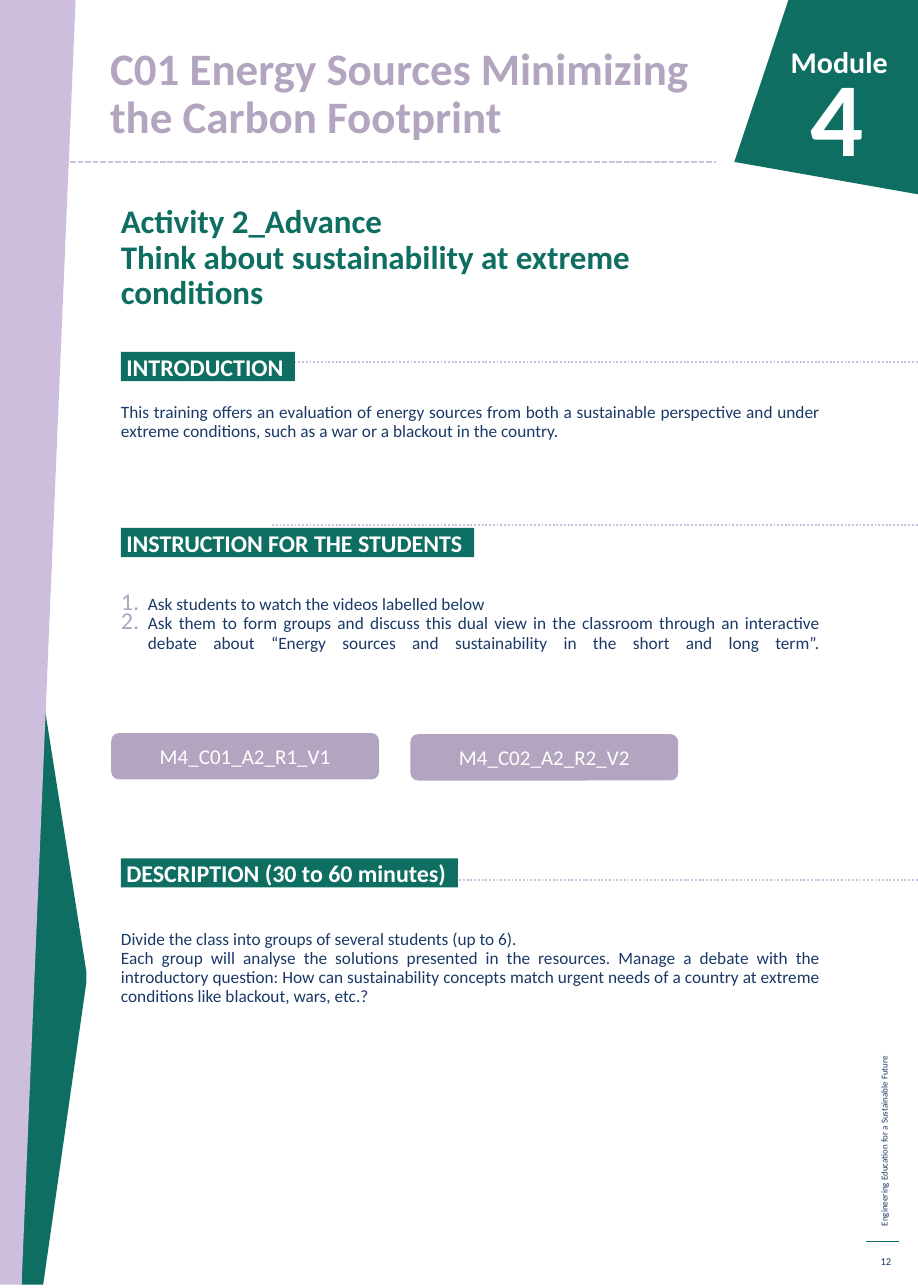
import pptx
import pptx.dml.color
import pptx.enum.dml
import pptx.enum.shapes
import pptx.enum.text
import pptx.oxml.ns
import pptx.util
from dataclasses import dataclass
from lxml import etree

ALIGN = pptx.enum.text.PP_ALIGN
ANCHOR = pptx.enum.text.MSO_ANCHOR
SHAPE = pptx.enum.shapes.MSO_SHAPE
DASH = pptx.enum.dml.MSO_LINE
UNIT = pptx.util.Inches(0.1)
COLUMNS, ROWS = 85, 119.3
MARGIN = 11.2
BODY_WIDTH = 64.7


@dataclass(frozen=True)
class Theme:
    font: str = "Calibri"
    green: str = "0E6E61"
    lavender: str = "CEBEDD"
    mauve: str = "B3A5C0"
    navy: str = "1A3966"
    white: str = "FFFFFF"
    number: float = 70
    title: float = 30
    activity: float = 22
    module: float = 20
    heading: float = 16
    label: float = 14
    body: float = 11.5
    page: float = 7
    footer: float = 6


THEME = Theme()


def grid(*cells):
    return [round(cell * UNIT) for cell in cells]


def rgb(value):
    return pptx.dml.color.RGBColor.from_string(value)


def add_bullet(p, tag, **attributes):
    return etree.SubElement(p._p.get_or_add_pPr(), pptx.oxml.ns.qn(tag), **attributes)


def write_text(tf, paragraphs, size, color, bold=False, align=ALIGN.LEFT,
               anchor=ANCHOR.TOP, spacing=None, insets=(1, 0.5, 1, 0.5), numbered=False):
    tf.word_wrap = True
    tf.auto_size = pptx.enum.text.MSO_AUTO_SIZE.NONE
    tf.vertical_anchor = anchor
    tf.margin_left, tf.margin_top, tf.margin_right, tf.margin_bottom = grid(*insets)
    for i, text in enumerate(paragraphs):
        p = tf.add_paragraph() if i else tf.paragraphs[0]
        p.text = text
        p.alignment = align
        p.space_before = pptx.util.Pt(0)
        if spacing:
            p.line_spacing = spacing
        p.font.size = pptx.util.Pt(size)
        for r in p.runs:
            r.font.name = THEME.font
            r.font.size = pptx.util.Pt(size)
            r.font.bold = bold
            r.font.color.rgb = rgb(color)
        if numbered:
            pPr = p._p.get_or_add_pPr()
            pPr.set("marL", str(round(2.5 * UNIT)))
            pPr.set("indent", str(round(-2.5 * UNIT)))
            bullet_color = add_bullet(p, "a:buClr")
            etree.SubElement(bullet_color, pptx.oxml.ns.qn("a:srgbClr"), val=THEME.mauve)
            add_bullet(p, "a:buSzPct", val="140000")
            add_bullet(p, "a:buAutoNum", type="arabicPeriod")


class Page:
    def __init__(self, prs, theme):
        self.theme = theme
        self.slide = prs.slides.add_slide(prs.slide_layouts[5])
        self.shapes = self.slide.shapes

    def title(self, text, box, **fmt):
        sp = self.shapes.title
        sp.left, sp.top, sp.width, sp.height = grid(*box)
        write_text(sp.text_frame, [text], **fmt)

    def text(self, paragraphs, box, rotation=0, **fmt):
        sp = self.shapes.add_textbox(*grid(*box))
        sp.rotation = rotation
        write_text(sp.text_frame, paragraphs, **fmt)

    def body(self, paragraphs, top, height, **fmt):
        self.text(paragraphs, (MARGIN, top, BODY_WIDTH, height), size=self.theme.body,
                  color=self.theme.navy, align=ALIGN.JUSTIFY,
                  spacing=pptx.util.Pt(12.8), insets=(0, 0, 0, 0), **fmt)

    def fill(self, sp, color):
        sp.shadow.inherit = False
        sp.fill.solid()
        sp.fill.fore_color.rgb = rgb(color)
        sp.line.fill.background()

    def polygon(self, points, color):
        builder = self.shapes.build_freeform(*points[0], scale=UNIT)
        builder.add_line_segments(points[1:], close=True)
        self.fill(builder.convert_to_shape(), color)

    def box(self, kind, text, box, color, **fmt):
        sp = self.shapes.add_shape(kind, *grid(*box))
        self.fill(sp, color)
        write_text(sp.text_frame, [text], color=self.theme.white, anchor=ANCHOR.MIDDLE, **fmt)

    def heading(self, text, top, width):
        self.box(SHAPE.RECTANGLE, text, (MARGIN, top, width, 2.7), self.theme.green,
                 size=self.theme.heading, bold=True, insets=(0.5, 0, 0, 0))

    def line(self, left, right, row, color, width, dash=None):
        connector = self.shapes.add_connector(
            pptx.enum.shapes.MSO_CONNECTOR.STRAIGHT, *grid(left, row, right, row))
        connector.line.color.rgb = rgb(color)
        connector.line.width = pptx.util.Pt(width)
        if dash:
            connector.line.dash_style = dash
        etree.SubElement(connector._element.spPr, pptx.oxml.ns.qn("a:effectLst"))


def main():
    prs = pptx.Presentation()
    prs.slide_width, prs.slide_height = grid(COLUMNS, ROWS)
    t = THEME
    page = Page(prs, t)

    page.polygon([(4, ROWS), (2.3, ROWS), (2.3, 51.7), (8.3, 89.7), (8.5, 91)], t.green)
    page.polygon([(0, 0), (6.7, 0), (2.5, ROWS), (0, ROWS)], t.lavender)
    page.polygon([(COLUMNS, 0.1), (72.9, 0.1), (67.8, 14.8), (COLUMNS, 18.3)], t.green)

    page.title("C01 Energy Sources Minimizing the Carbon Footprint", (9.2, 2.8, 59.9, 11),
               size=t.title, color=t.mauve, bold=True, anchor=ANCHOR.BOTTOM, spacing=0.89)
    page.line(6.5, 66.3, 15, t.lavender, 1.25, DASH.SQUARE_DOT)
    page.text(["Module"], (65.2, 3.5, 18, 14.2), size=t.module, color=t.white,
              bold=True, align=ALIGN.RIGHT)
    page.text(["4"], (63, 4.3, 18, 14.2), size=t.number, color=t.white,
              bold=True, align=ALIGN.RIGHT)
    page.text(["Activity 2_Advance\nThink about sustainability at extreme conditions"],
              (10.2, 18.5, 62.7, 10.5), size=t.activity, color=t.green, bold=True, spacing=0.9)

    for row in (33.5, 48.6, 81.5):
        page.line(25.2, COLUMNS, row, t.lavender, 1.25, DASH.ROUND_DOT)
    for text, top, width in (
        ("INTRODUCTION", 32.6, 16.1),
        ("INSTRUCTION FOR THE STUDENTS", 48.9, 32.7),
        ("DESCRIPTION (30 to 60 minutes)", 79.5, 31.2),
    ):
        page.heading(text, top, width)

    page.body(["This training offers an evaluation of energy sources from both a sustainable "
               "perspective and under extreme conditions, such as a war or a blackout in the "
               "country."], 37.3, 3.6)
    page.body(["Ask students to watch the videos labelled below",
               "Ask them to form groups and discuss this dual view in the classroom through an "
               "interactive debate about “Energy sources and sustainability in the short and "
               "long term”.\n"], 55.1, 7.2, numbered=True)
    page.body(["Divide the class into groups of several students (up to 6).",
               "Each group will analyse the solutions presented in the resources. Manage a "
               "debate with the introductory question: How can sustainability concepts match "
               "urgent needs of a country at extreme conditions like blackout, wars, etc.?"],
              86.1, 7.2)

    for i, video in enumerate(("M4_C01_A2_R1_V1", "M4_C02_A2_R2_V2")):
        page.box(SHAPE.ROUNDED_RECTANGLE, video, (10.3 + 27.7 * i, 67.9 + 0.1 * i, 24.8, 4.3),
                 t.mauve, size=t.label, align=ALIGN.CENTER)

    page.text(["Engineering Education for a Sustainable Future"], (59.4, 91.1, 44.9, 2),
              rotation=270, size=t.footer, color=t.navy)
    page.line(80.2, 83.2, 115, t.green, 0.75)
    page.text(["12"], (80.2, 115.4, 3.3, 2.9), size=t.page, color=t.navy,
              align=ALIGN.RIGHT, anchor=ANCHOR.MIDDLE)

    prs.save("out.pptx")


if __name__ == "__main__":
    main()
